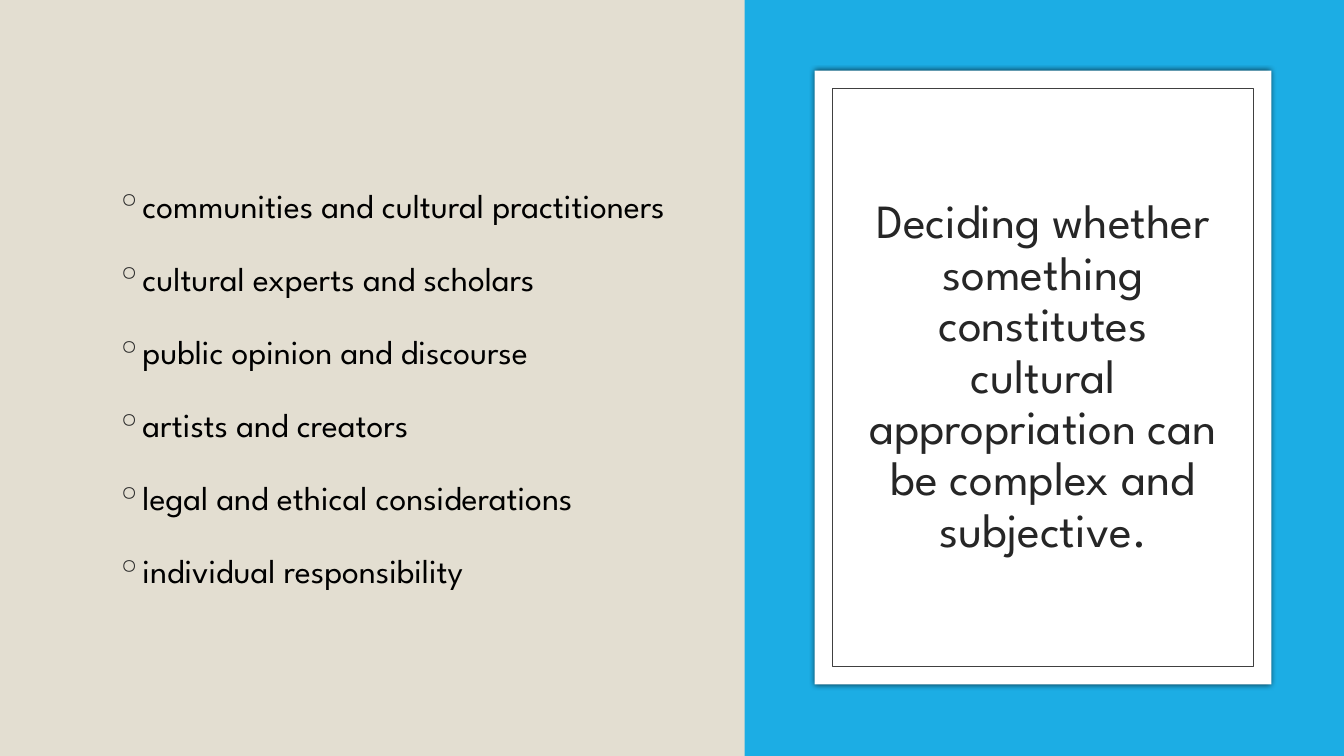
import pptx
import pptx.util
import pptx.dml.color
import pptx.enum.shapes
import pptx.enum.text
import pptx.oxml
import pptx.oxml.ns

Cm = pptx.util.Cm
Pt = pptx.util.Pt
RGBColor = pptx.dml.color.RGBColor
ALIGN = pptx.enum.text.PP_ALIGN

BEIGE = RGBColor(0xE3, 0xDE, 0xD1)
BLUE = RGBColor(0x1C, 0xAD, 0xE4)
WHITE = RGBColor(0xFF, 0xFF, 0xFF)
BLACK = RGBColor(0x00, 0x00, 0x00)
CHARCOAL = RGBColor(0x26, 0x26, 0x26)
FRAME_GREY = RGBColor(0x40, 0x40, 0x40)
FONT = "League Spartan"

SLIDE_WIDTH = Cm(33.87)
SLIDE_HEIGHT = Cm(19.05)
LIST_WIDTH = Cm(18.77)
CARD_TOP = Cm(1.78)
CARD_HEIGHT = Cm(15.47)

TITLE = ("Deciding whether something constitutes cultural "
         "appropriation can be complex and subjective.")
DECIDERS = [
    "communities and cultural practitioners",
    "cultural experts and scholars",
    "public opinion and discourse",
    "artists and creators",
    "legal and ethical considerations",
    "individual responsibility",
]


def add_rectangle(slide, box, fill, line=None):
    shape = slide.shapes.add_shape(pptx.enum.shapes.MSO_SHAPE.RECTANGLE, *box)
    shape.fill.solid()
    shape.fill.fore_color.rgb = fill
    if line is None:
        shape.line.fill.background()
    else:
        shape.line.color.rgb = line
        shape.line.width = Pt(0.75)
    shape.shadow.inherit = False
    return shape


def inset(box, horizontal, vertical):
    left, top, width, height = box
    return (left + horizontal, top + vertical,
            width - 2 * horizontal, height - 2 * vertical)


def add_glow_shadow(shape):
    effects = shape._element.spPr.find(pptx.oxml.ns.qn("a:effectLst"))
    effects.append(pptx.oxml.parse_xml(
        f'<a:outerShdw {pptx.oxml.ns.nsdecls("a")} blurRad="{Pt(4)}" dist="0" '
        'algn="ctr" rotWithShape="0"><a:srgbClr val="000000">'
        '<a:alpha val="66000"/></a:srgbClr></a:outerShdw>'))


def set_text(paragraph, text, *, size, color, align=ALIGN.LEFT,
             line_spacing=1.0, space_before=0):
    run = paragraph.add_run()
    run.text = text
    run.font.name = FONT
    run.font.size = Pt(size)
    run.font.color.rgb = color
    paragraph.alignment = align
    paragraph.line_spacing = line_spacing
    paragraph.space_before = Pt(space_before)


def add_bullet(paragraph, character, color, indent):
    properties = paragraph._p.get_or_add_pPr()
    properties.set("marL", str(indent))
    properties.set("indent", str(-indent))
    namespace = pptx.oxml.ns.nsdecls("a")
    properties.append(pptx.oxml.parse_xml(
        f'<a:buClr {namespace}><a:srgbClr val="{color}"/></a:buClr>'))
    properties.append(pptx.oxml.parse_xml(
        f'<a:buChar {namespace} char="{character}"/>'))


def format_frame(frame):
    frame.word_wrap = True
    frame.auto_size = pptx.enum.text.MSO_AUTO_SIZE.NONE
    frame.vertical_anchor = pptx.enum.text.MSO_ANCHOR.MIDDLE


def build_list_panel(slide, box):
    left, top, width, height = box
    add_rectangle(slide, box, BEIGE)
    text_box = slide.shapes.add_textbox(
        left + Cm(2.67), top + CARD_TOP, Cm(14.4), CARD_HEIGHT)
    frame = text_box.text_frame
    format_frame(frame)
    for index, decider in enumerate(DECIDERS):
        paragraph = frame.add_paragraph() if index else frame.paragraphs[0]
        set_text(paragraph, decider, size=24, color=BLACK,
                 line_spacing=1.5, space_before=9)
        add_bullet(paragraph, "◦", CHARCOAL, Cm(0.5))


def build_title_card(slide, box):
    card = add_rectangle(slide, box, WHITE)
    add_glow_shadow(card)
    add_rectangle(slide, inset(box, Cm(0.46), Cm(0.46)), WHITE, FRAME_GREY)
    title = slide.shapes.title
    title.left, title.top, title.width, title.height = inset(
        box, Cm(0.91), Cm(1.5))
    format_frame(title.text_frame)
    set_text(title.text_frame.paragraphs[0], TITLE, size=34, color=CHARCOAL,
             align=ALIGN.CENTER, line_spacing=0.9)
    slide.shapes._spTree.append(title._element)


def main():
    presentation = pptx.Presentation()
    presentation.slide_width = SLIDE_WIDTH
    presentation.slide_height = SLIDE_HEIGHT
    slide = presentation.slides.add_slide(presentation.slide_layouts[5])
    slide.background.fill.solid()
    slide.background.fill.fore_color.rgb = BEIGE
    add_rectangle(slide, (0, 0, SLIDE_WIDTH, SLIDE_HEIGHT), BLUE)
    build_list_panel(slide, (0, 0, LIST_WIDTH, SLIDE_HEIGHT))
    build_title_card(slide, (Cm(20.53), CARD_TOP, Cm(11.51), CARD_HEIGHT))
    presentation.save("out.pptx")


if __name__ == "__main__":
    main()
